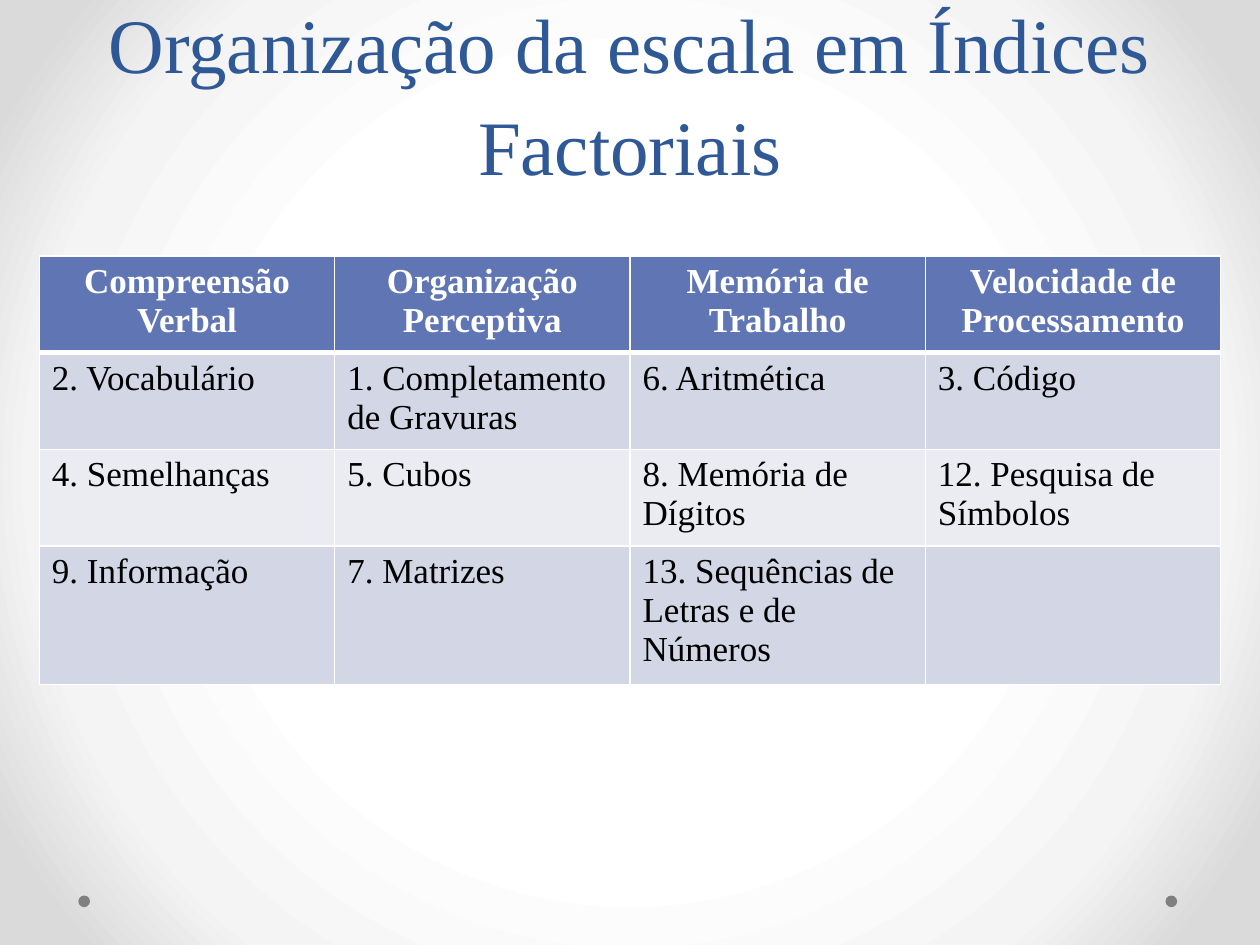
"""Build a slide with a table of the scale's factorial indices."""
from lxml import etree
from pptx import Presentation
from pptx import util as u
from pptx.dml.color import RGBColor
from pptx.enum import shapes, text
from pptx.oxml import parse_xml
from pptx.oxml.ns import qn

TITLE = "Organização da escala em Índices Factoriais"
ROWS = [
    ["Compreensão Verbal", "Organização Perceptiva", "Memória de Trabalho", "Velocidade de Processamento"],
    ["2. Vocabulário", "1. Completamento de Gravuras", "6. Aritmética", "3. Código"],
    ["4. Semelhanças", "5. Cubos", "8. Memória de Dígitos", "12. Pesquisa de Símbolos"],
    ["9. Informação", "7. Matrizes", "13. Sequências de Letras e de Números", ""],
]
ROW_HEIGHTS = [51.5, 51.5, 51.5, 74]
COLUMN_WIDTH = 168.75
FONT = "Times New Roman"
COLORS = {
    "title": "2F5897", "header": "6076B4", "odd": "D2D6E5", "even": "EAECF2",
    "white": "FFFFFF", "black": "000000", "dot": "808080",
}
GRADIENT = [(50, "FFFFFF"), (76, "F4F4F4"), (92, "DADADA")]
DOTS = [44.75, 666]
NAMESPACE = "http://schemas.openxmlformats.org/drawingml/2006/main"


def color(name):
    return RGBColor.from_string(COLORS[name])


def style(paragraph, size, color_name, bold=False, centered=False):
    paragraph.font.name = FONT
    paragraph.font.size = u.Pt(size)
    paragraph.font.bold = bold
    paragraph.font.color.rgb = color(color_name)
    paragraph.alignment = text.PP_ALIGN.CENTER if centered else text.PP_ALIGN.LEFT


def set_background(slide):
    slide.background.fill.solid()
    properties = slide.element.find(".//" + qn("p:bgPr"))
    stops = "".join(
        f'<a:gs pos="{position * 1000}"><a:srgbClr val="{value}"/></a:gs>'
        for position, value in GRADIENT
    )
    gradient = parse_xml(
        f'<a:gradFill xmlns:a="{NAMESPACE}" rotWithShape="1"><a:gsLst>{stops}</a:gsLst>'
        '<a:path path="circle"><a:fillToRect l="50000" t="50000" r="50000" b="50000"/></a:path>'
        "</a:gradFill>"
    )
    properties.replace(properties[0], gradient)


def set_borders(cell, widths):
    properties = cell._tc.get_or_add_tcPr()
    for index, (side, width) in enumerate(widths.items()):
        line = etree.Element(qn(f"a:ln{side}"), w=str(u.Pt(width)))
        fill = etree.SubElement(line, qn("a:solidFill"))
        etree.SubElement(fill, qn("a:srgbClr"), val=COLORS["white"])
        properties.insert(index, line)


def add_dots(slide):
    for left in DOTS:
        dot = slide.shapes.add_shape(
            shapes.MSO_SHAPE.OVAL, u.Pt(left), u.Pt(511.75), u.Pt(6.65), u.Pt(6.65))
        dot.shadow.inherit = False
        dot.fill.solid()
        dot.fill.fore_color.rgb = color("dot")
        dot.line.fill.background()


def add_title(slide):
    box = slide.shapes.add_textbox(0, u.Pt(-13.5), u.Pt(720), u.Pt(126))
    frame = box.text_frame
    frame.word_wrap = True
    frame.vertical_anchor = text.MSO_ANCHOR.BOTTOM
    paragraph = frame.paragraphs[0]
    paragraph.text = TITLE
    paragraph.line_spacing = u.Pt(58)
    style(paragraph, 44, "title", centered=True)


def add_index_table(slide):
    columns = len(ROWS[0])
    table = slide.shapes.add_table(
        len(ROWS), columns, u.Pt(22.5), u.Pt(146.25),
        u.Pt(COLUMN_WIDTH * columns), u.Pt(sum(ROW_HEIGHTS))).table
    for column in table.columns:
        column.width = u.Pt(COLUMN_WIDTH)
    for row_index, values in enumerate(ROWS):
        table.rows[row_index].height = u.Pt(ROW_HEIGHTS[row_index])
        header = row_index == 0
        fill = "header" if header else ("odd" if row_index % 2 else "even")
        widths = {"L": 1, "R": 1, "T": 3 if row_index == 1 else 1, "B": 3 if header else 1}
        for column_index, value in enumerate(values):
            cell = table.cell(row_index, column_index)
            cell.text = value
            cell.fill.solid()
            cell.fill.fore_color.rgb = color(fill)
            style(cell.text_frame.paragraphs[0], 20, "white" if header else "black", header, header)
            set_borders(cell, widths)


def main():
    presentation = Presentation()
    presentation.slide_width, presentation.slide_height = u.Pt(720), u.Pt(540)
    slide = presentation.slides.add_slide(presentation.slide_layouts[6])
    set_background(slide)
    add_dots(slide)
    add_title(slide)
    add_index_table(slide)
    presentation.save("out.pptx")


if __name__ == "__main__":
    main()
